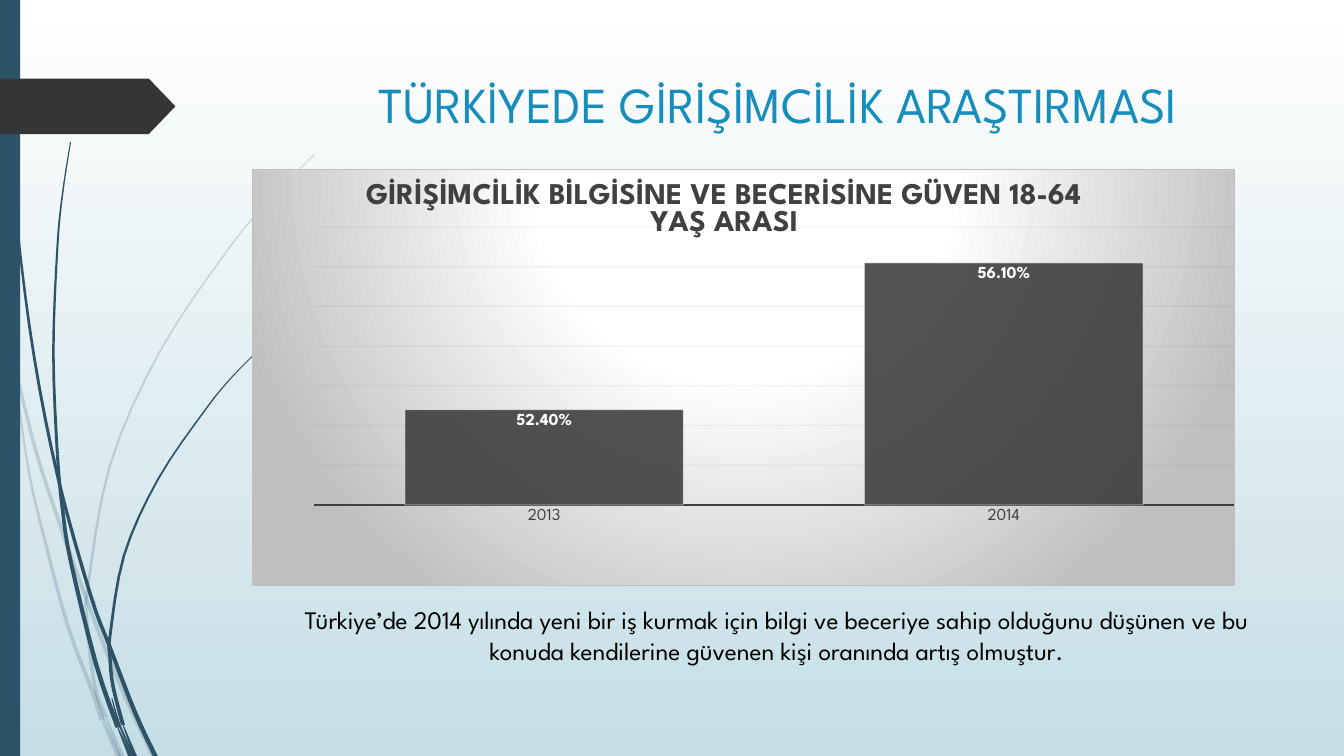
from lxml import etree
from pptx import Presentation
from pptx.chart.data import CategoryChartData
from pptx.dml.color import RGBColor
from pptx.enum.chart import XL_CHART_TYPE, XL_LABEL_POSITION, XL_TICK_MARK
from pptx.enum.shapes import MSO_SHAPE
from pptx.enum.text import PP_ALIGN
from pptx.oxml import parse_xml
from pptx.oxml.ns import nsdecls, qn
from pptx.util import Inches, Pt

FONT = "League Spartan"
TEAL = "2E5369"
CHARCOAL = "353535"
CURVE_STEPS = 4

LIGHT_STEMS = [
    ([(0, 2.9), (0.12, 3.5), (0.35, 4.45), (0.6, 5.22), (0.86, 5.95),
      (1.07, 6.5), (1.26, 6.95), (1.52, 7.5)], (1, 4), 0.03, 0.05),
    ([(0.11, 3.5), (0.17, 3.9), (0.29, 4.7), (0.43, 5.3), (0.67, 6.2),
      (0.92, 6.87), (1.01, 7.14)], (), 0.01, 0.05),
    ([(3.12, 1.53), (2.68, 1.98), (2.28, 2.45), (1.59, 3.48), (1.09, 4.62),
      (0.87, 5.84), (0.86, 6.08), (0.89, 6.46), (0.95, 6.85), (1.05, 7.11)], (5, 6), 0.01, 0.04),
    ([(1.01, 7.14), (1.17, 7.5)], (), 0.01, 0.05),
    ([(0.94, 6.85), (1.02, 7.1), (1.19, 7.5)], (), 0.01, 0.02),
    ([(1.05, 7.11), (1.21, 7.5)], (), 0.01, 0.05),
]
DARK_STEMS = [
    ([(0.03, 0), (0.05, 0.48), (0.07, 1.1), (0.18, 2.33), (0.34, 3.55), (0.58, 4.76),
      (0.9, 5.91), (1.09, 6.42), (1.34, 7.07), (1.54, 7.5)], (5, 7), 0.01, 0.05),
    ([(0.7, 1.41), (0.62, 1.93), (0.57, 2.45), (0.53, 3.49), (0.57, 4.51), (0.62, 5.05),
      (0.7, 5.56), (0.95, 6.58), (1.17, 7.22)], (4, 5), 0.01, 0.05),
    ([(2.6, 3.44), (2.31, 3.73), (2.04, 4.06), (1.57, 4.75), (1.23, 5.51),
      (1.09, 6.32), (1.09, 6.5), (1.12, 6.8), (1.22, 7.19)], (5, 6), 0.01, 0.04),
    ([(1.17, 7.22), (1.29, 7.5)], (), 0.01, 0.04),
    ([(1.11, 6.93), (1.19, 7.2), (1.32, 7.5)], (), 0.01, 0.03),
    ([(1.22, 7.19), (1.34, 7.5)], (), 0.01, 0.04),
]


def rgb(value):
    return RGBColor.from_string(value)


def set_alpha(color_parent, percent):
    for clr in color_parent.iter(qn("a:srgbClr")):
        etree.SubElement(clr, qn("a:alpha")).set("val", str(percent * 1000))


def paint(sp, color, alpha=100):
    sp.shadow.inherit = False
    sp.fill.solid()
    sp.fill.fore_color.rgb = rgb(color)
    sp.line.fill.background()
    if alpha < 100:
        set_alpha(sp._element.spPr, alpha)


def set_line(line, color, width, alpha=100):
    line.color.rgb = rgb(color)
    line.width = Pt(width)
    if alpha < 100:
        set_alpha(line._ln, alpha)


def set_font(font, size, color, bold=False):
    font.name = FONT
    font.size = Pt(size)
    font.bold = bold
    font.color.rgb = rgb(color)


def smooth_curve(points):
    padded = [points[0], *points, points[-1]]
    curve = []
    for a, b, c, d in zip(padded, padded[1:], padded[2:], padded[3:]):
        for i in range(CURVE_STEPS):
            t = i / CURVE_STEPS
            curve.append(tuple(
                (2 * q + (r - p) * t + (2 * p - 5 * q + 4 * r - u) * t ** 2
                 + (3 * q - p - 3 * r + u) * t ** 3) / 2
                for p, q, r, u in zip(a, b, c, d)))
    return curve + [points[-1]]


def add_stem(s, points, cuts, start_width, end_width, alpha):
    curve = smooth_curve(points)
    last = len(curve) - 1
    left, right = [], []
    for i, (x, y) in enumerate(curve):
        half = (start_width + (end_width - start_width) * i / last) / 2
        left.append((Inches(x - half), Inches(y)))
        right.append((Inches(x + half), Inches(y)))
    ends = [0, *(cut * CURVE_STEPS for cut in cuts), last]
    for first, final in zip(ends, ends[1:]):
        outline = left[first:final + 1] + right[first:final + 1][::-1]
        fb = s.shapes.build_freeform(*outline[0])
        fb.add_line_segments(outline[1:], close=True)
        paint(fb.convert_to_shape(), TEAL, alpha)


def add_block(s, preset, left, top, width, height, color):
    sp = s.shapes.add_shape(preset, Inches(left), Inches(top), Inches(width), Inches(height))
    paint(sp, color)
    return sp


def add_text(s, text, left, top, width, height, size, color):
    tf = s.shapes.add_textbox(Inches(left), Inches(top), Inches(width), Inches(height)).text_frame
    tf.word_wrap = True
    tf.margin_left = tf.margin_right = Inches(0.05)
    tf.text = text
    p = tf.paragraphs[0]
    p.alignment = PP_ALIGN.CENTER
    set_font(p.runs[0].font, size, color)


def manual_layout(x, y, w=None, h=None, inner=False):
    target = '<c:layoutTarget val="inner"/>' if inner else ""
    modes = '<c:xMode val="edge"/><c:yMode val="edge"/>'
    places = "".join(f'<c:{k} val="{v}"/>' for k, v in zip("xywh", (x, y, w, h)) if v is not None)
    return parse_xml(f'<c:layout {nsdecls("c")}><c:manualLayout>{target}{modes}{places}'
                     '</c:manualLayout></c:layout>')


def set_layout(parent, layout, index):
    for old in parent.findall(qn("c:layout")):
        parent.remove(old)
    parent.insert(index, layout)


def add_chart_background(chart):
    stops = "".join(f'<a:gs pos="{pos * 1000}"><a:srgbClr val="{color}"/></a:gs>'
                    for pos, color in ((0, "FFFFFF"), (39, "FFFFFF"), (100, "BFBFBF")))
    sppr = parse_xml(
        f'<c:spPr {nsdecls("c", "a")}><a:gradFill><a:gsLst>{stops}</a:gsLst><a:path path="circle">'
        '<a:fillToRect l="50000" t="-80000" r="50000" b="180000"/></a:path></a:gradFill>'
        '<a:ln w="9525"><a:solidFill><a:srgbClr val="BFBFBF"/></a:solidFill></a:ln></c:spPr>')
    chart._chartSpace.find(qn("c:chart")).addnext(sppr)


def add_confidence_chart(s):
    data = CategoryChartData(number_format="0.00%")
    data.categories = ["2013", "2014"]
    data.add_series("Series 1", (0.524, 0.561))
    chart = s.shapes.add_chart(XL_CHART_TYPE.COLUMN_CLUSTERED, Inches(2.5), Inches(1.68),
                               Inches(9.75), Inches(4.13), data).chart
    set_font(chart.font, 10, "000000")
    chart.has_legend = False
    tf = chart.chart_title.text_frame
    tf.text = "GİRİŞİMCİLİK BİLGİSİNE VE BECERİSİNE GÜVEN 18-64 YAŞ ARASI"
    set_font(tf.paragraphs[0].runs[0].font, 21.6, "404040", True)
    chart.chart_title.include_in_layout = False
    set_layout(chart.chart_title._element, manual_layout(0.11, 0.01), 1)
    set_layout(chart._chartSpace.chart.plotArea,
               manual_layout(0.063, 0.138, 0.936, 0.669, True), 0)

    years = chart.category_axis
    years.major_tick_mark = XL_TICK_MARK.NONE
    set_font(years.tick_labels.font, 12, "404040")
    set_line(years.format.line, "404040", 1.5)
    shares = chart.value_axis
    shares.minimum_scale, shares.maximum_scale, shares.major_unit = 0.5, 0.57, 0.01
    shares.visible = False
    set_line(shares.major_gridlines.format.line, "0D0D0D", 0.75, 5)

    plot = chart.plots[0]
    plot.vary_by_categories = False
    plot.gap_width = 65
    series = plot.series[0]
    series.format.fill.solid()
    series.format.fill.fore_color.rgb = rgb(CHARCOAL)
    set_alpha(series._element.spPr, 85)
    set_line(series.format.line, "FFFFFF", 0.75, 50)
    labels = series.data_labels
    labels.show_value = True
    labels.number_format, labels.number_format_is_linked = "0.00%", False
    labels.position = XL_LABEL_POSITION.INSIDE_END
    set_font(labels.font, 12, "FFFFFF", True)
    add_chart_background(chart)


def set_background(s):
    fill = s.background.fill
    fill.gradient()
    fill.gradient_angle = 270
    for stop, position, color in zip(fill.gradient_stops, (0, 1), ("FFFFFF", "C5DEE5")):
        stop.position = position
        stop.color.rgb = rgb(color)


def main():
    prs = Presentation()
    prs.slide_width, prs.slide_height = Inches(13.33), Inches(7.5)
    s = prs.slides.add_slide(prs.slide_layouts[6])
    set_background(s)
    for stems, alpha in ((LIGHT_STEMS, 20), (DARK_STEMS, 100)):
        for stem in stems:
            add_stem(s, *stem, alpha)
    add_block(s, MSO_SHAPE.RECTANGLE, 0, 0, 0.2, 7.5, TEAL)
    tag = add_block(s, MSO_SHAPE.PENTAGON, 0, 0.78, 1.74, 0.55, CHARCOAL)
    tag.adjustments[0] = 0.48
    add_text(s, "TÜRKİYEDE GİRİŞİMCİLİK ARAŞTIRMASI", 2.84, 0.68, 9.75, 1.4, 36, "178DBB")
    add_confidence_chart(s)
    add_text(s, "Türkiye’de 2014 yılında yeni bir iş kurmak için bilgi ve beceriye sahip olduğunu "
             "düşünen ve bu konuda kendilerine güvenen kişi oranında artış olmuştur.",
             2.96, 5.95, 9.49, 1.01, 18, "000000")
    prs.save("out.pptx")


if __name__ == "__main__":
    main()
